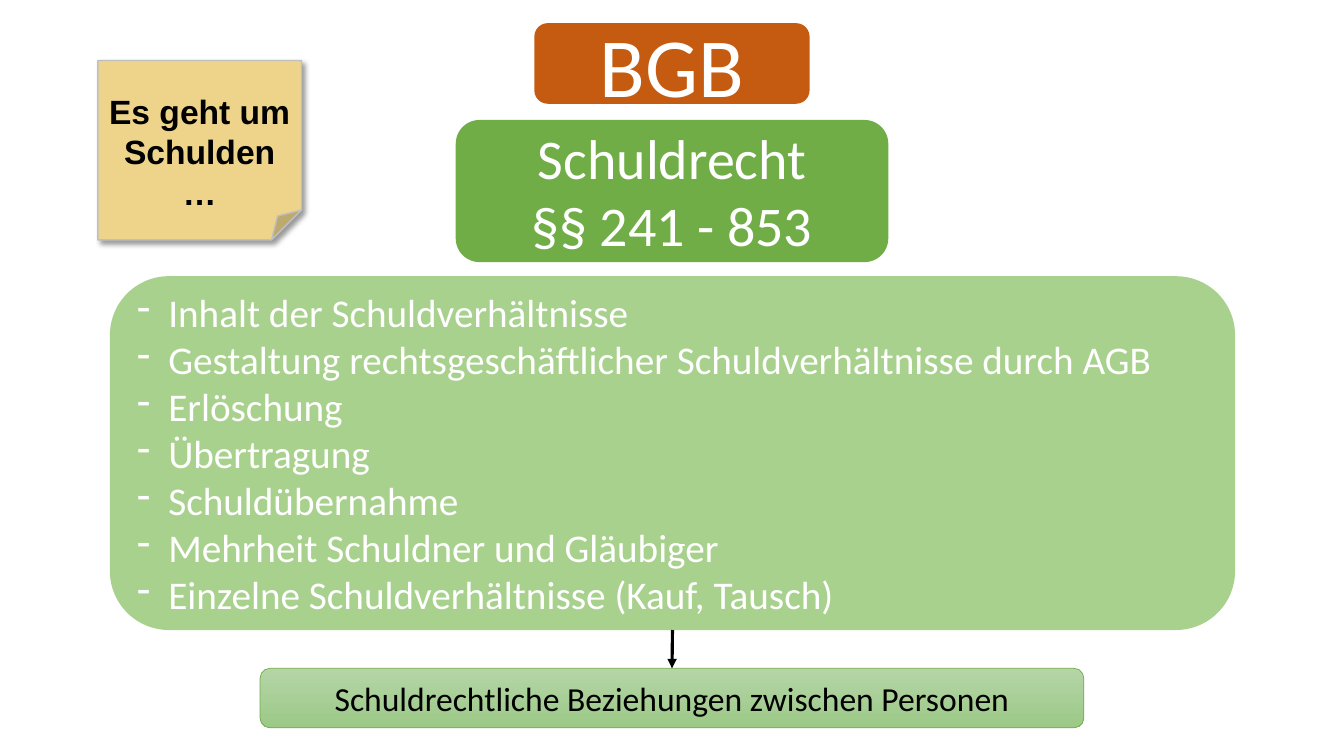
from dataclasses import dataclass
from typing import Optional

from lxml import etree
from pptx import Presentation
from pptx.dml.color import RGBColor
from pptx.enum import shapes, text
from pptx.oxml import ns
from pptx.util import Emu, Pt

SCALE = 9144
INDENT = 31
INSET = 5

WHITE = RGBColor(0xFF, 0xFF, 0xFF)
BLACK = RGBColor(0x00, 0x00, 0x00)
ORANGE = RGBColor(0xC5, 0x5A, 0x11)
GREEN = RGBColor(0x70, 0xAD, 0x47)
LIGHT = RGBColor(0xA9, 0xD1, 0x8E)
PALE = RGBColor(0xB5, 0xD5, 0xA7)
SAGE = RGBColor(0x9C, 0xC9, 0x87)
SAND = RGBColor(0xEE, 0xD4, 0x8A)
GREY = RGBColor(0xBF, 0xBF, 0xBF)

ROUND = shapes.MSO_SHAPE.ROUNDED_RECTANGLE
FOLD = shapes.MSO_SHAPE.FOLDED_CORNER


@dataclass(frozen=True)
class Box:
    left: int
    top: int
    width: int
    height: int
    lines: tuple[str, ...]
    size: int
    fill: RGBColor
    fade: Optional[RGBColor] = None
    edge: Optional[RGBColor] = None
    weight: float = 0
    ink: RGBColor = WHITE
    font: str = "Calibri"
    bold: bool = False
    kind: shapes.MSO_SHAPE = ROUND
    dashes: bool = False
    inset: int = INSET


TITLE = Box(530, 23, 273, 80, ("BGB",), 60, ORANGE)
LAW = Box(452, 119, 429, 141, ("Schuldrecht", "§§ 241 - 853"), 40, GREEN)
TOPICS = Box(109, 274, 1116, 351, (
    "Inhalt der Schuldverhältnisse",
    "Gestaltung rechtsgeschäftlicher Schuldverhältnisse durch AGB",
    "Erlöschung",
    "Übertragung",
    "Schuldübernahme",
    "Mehrheit Schuldner und Gläubiger",
    "Einzelne Schuldverhältnisse (Kauf, Tausch)",
), 28, LIGHT, dashes=True)
RESULT = Box(258, 663, 817, 59, ("Schuldrechtliche Beziehungen zwischen Personen",),
             24, PALE, fade=SAGE, edge=GREEN, weight=0.5, ink=BLACK)
NOTE = Box(97, 60, 202, 178, ("Es geht um Schulden…",), 24, SAND, edge=GREY,
           weight=1, ink=BLACK, font="Arial", bold=True, kind=FOLD, inset=37)


def px(count: int) -> Emu:
    return Emu(count * SCALE)


def add_node(parent, tag: str, **attrs: str):
    return etree.SubElement(parent, ns.qn(tag), attrs)


def add_dash(para) -> None:
    props = para._p.get_or_add_pPr()
    props.set("marL", str(px(INDENT)))
    props.set("indent", str(-px(INDENT)))
    add_node(props, "a:buFontTx")
    add_node(props, "a:buChar", char="-")


def add_shade(shape) -> None:
    props = shape._element.spPr
    effects = props.find(ns.qn("a:effectLst"))
    shade = add_node(effects, "a:outerShdw", blurRad=str(Pt(4)), dist=str(Pt(3)),
                     dir="2700000", algn="tl", rotWithShape="0")
    tint = add_node(shade, "a:srgbClr", val=str(BLACK))
    add_node(tint, "a:alpha", val="40000")


def paint(shape, box: Box) -> None:
    if box.fade is None:
        shape.fill.solid()
        shape.fill.fore_color.rgb = box.fill
    else:
        shape.fill.gradient()
        shape.fill.gradient_angle = 270
        for stop, color, place in zip(shape.fill.gradient_stops,
                                      (box.fill, box.fade), (0, 1)):
            stop.color.rgb = color
            stop.position = place
    if box.edge is None:
        shape.line.fill.background()
    else:
        shape.line.color.rgb = box.edge
        shape.line.width = Pt(box.weight)


def write(shape, box: Box) -> None:
    frame = shape.text_frame
    frame.word_wrap = True
    frame.vertical_anchor = text.MSO_ANCHOR.MIDDLE
    frame.margin_top = px(box.inset)
    frame.margin_bottom = px(INSET)
    for index, line in enumerate(box.lines):
        para = frame.add_paragraph() if index else frame.paragraphs[0]
        if box.dashes:
            para.alignment = text.PP_ALIGN.LEFT
            add_dash(para)
        else:
            para.alignment = text.PP_ALIGN.CENTER
        run = para.add_run()
        run.text = line
        run.font.name = box.font
        run.font.size = Pt(box.size)
        run.font.bold = box.bold
        run.font.color.rgb = box.ink


def draw(slide, box: Box):
    shape = slide.shapes.add_shape(box.kind, px(box.left), px(box.top),
                                   px(box.width), px(box.height))
    shape.shadow.inherit = False
    paint(shape, box)
    write(shape, box)
    return shape


def link(slide, start, end) -> None:
    arrow = slide.shapes.add_connector(shapes.MSO_CONNECTOR.STRAIGHT, 0, 0, 0, 0)
    arrow.begin_connect(start, 2)
    arrow.end_connect(end, 0)
    arrow.line.color.rgb = BLACK
    arrow.line.width = Pt(2.25)
    add_node(arrow.line._get_or_add_ln(), "a:tailEnd", type="triangle")
    add_node(arrow._element.spPr, "a:effectLst")


def main() -> None:
    deck = Presentation()
    deck.slide_width = px(1333)
    deck.slide_height = px(750)
    slide = deck.slides.add_slide(deck.slide_layouts[6])
    draw(slide, TITLE)
    draw(slide, LAW)
    topics = draw(slide, TOPICS)
    result = draw(slide, RESULT)
    link(slide, topics, result)
    add_shade(draw(slide, NOTE))
    deck.save("out.pptx")


if __name__ == "__main__":
    main()
